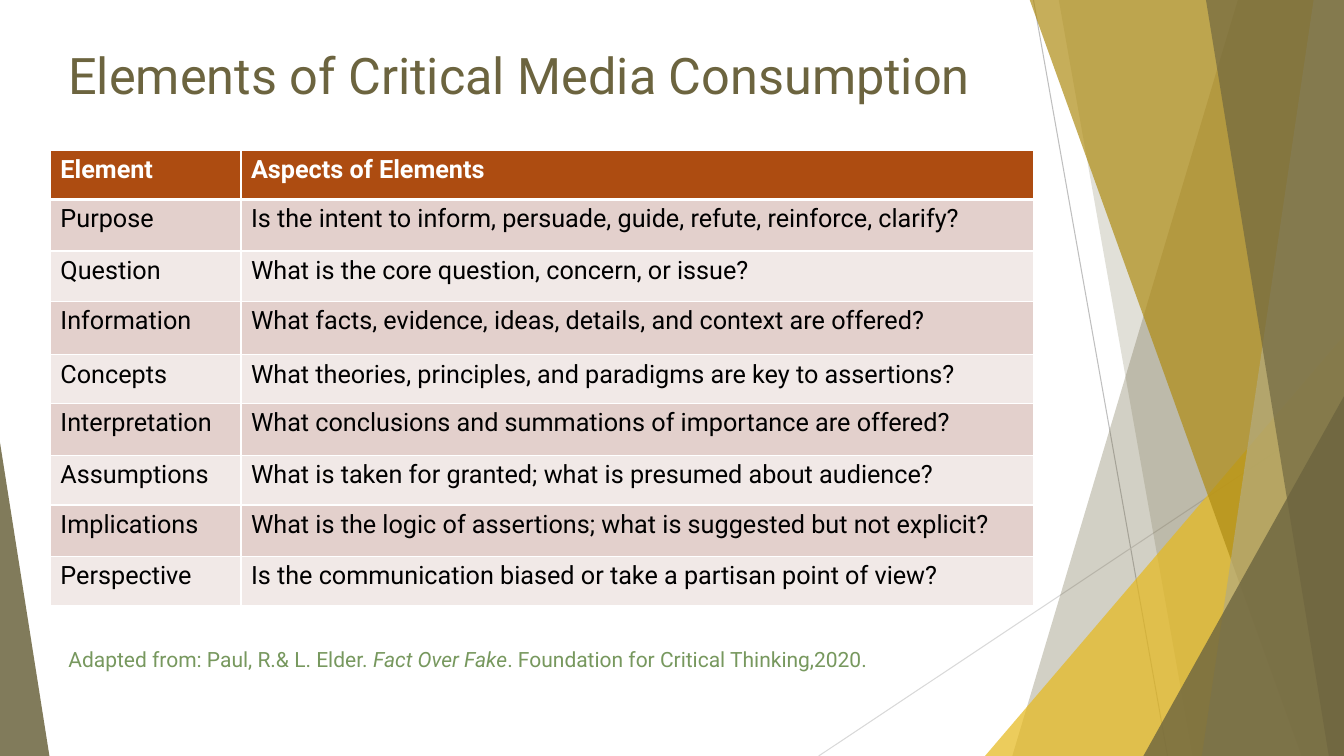
from dataclasses import dataclass

from pptx import Presentation
from pptx.dml.color import RGBColor
from pptx.enum.shapes import MSO_CONNECTOR, MSO_SHAPE
from pptx.enum.text import MSO_ANCHOR
from pptx.oxml.ns import qn
from pptx.util import Inches, Pt
from lxml.etree import SubElement

WIDTH, HEIGHT = 13.33, 7.5
RIBBON_TOP = -0.01


@dataclass(frozen=True)
class Theme:
    font: str = "Roboto"
    olive: str = "6C643F"
    gold: str = "E6B91E"
    dark_gold: str = "AF8C14"
    sand: str = "B4AB7F"
    green: str = "77985E"
    header: str = "AD4C11"
    bands: tuple[str, str] = ("E3D0CC", "F1E9E7")
    white: str = "FFFFFF"
    black: str = "000000"
    title_size: int = 36
    table_size: int = 18
    source_size: int = 15


THEME = Theme()


@dataclass(frozen=True)
class Ray:
    start: tuple[float, float]
    end: tuple[float, float]
    color: str


@dataclass(frozen=True)
class Ribbon:
    """Band from a slanted left edge to the right side of the slide."""
    top_x: float
    bottom_x: float
    color: str
    opacity: int


@dataclass(frozen=True)
class Wedge:
    """Right triangle standing on the bottom edge, with its apex at 0 or 1."""
    left: float
    top: float
    width: float
    apex: int
    color: str
    opacity: int


@dataclass(frozen=True)
class TextRun:
    text: str
    italic: bool = False


RAYS = [
    Ray((10.25, 0), (11.58, HEIGHT), "BFBFBF"),
    Ray((WIDTH, 4.03), (8.12, HEIGHT), "D9D9D9"),
]
FACETS = [
    Ribbon(12.28, 10.04, THEME.olive, 30),
    Ribbon(10.5, 11.83, THEME.olive, 20),
    Wedge(9.77, 3.33, 3.56, 1, THEME.gold, 72),
    Ribbon(10.21, 12.91, THEME.dark_gold, 70),
    Ribbon(13.03, 11.92, THEME.sand, 70),
    Ribbon(11.96, 13.18, THEME.olive, 65),
    Wedge(11.34, 3.93, 1.99, 1, THEME.olive, 80),
    Wedge(0, 4.39, 0.49, 0, THEME.olive, 85),
]
COLUMN_WIDTHS = [1.89, 7.86]
ROW_HEIGHTS = [0.49, 0.51, 0.5, 0.53, 0.48, 0.52, 0.49, 0.51, 0.49]
ROWS = [
    ("Element", "Aspects of Elements"),
    ("Purpose", "Is the intent to inform, persuade, guide, refute, reinforce, clarify?"),
    ("Question", "What is the core question, concern, or issue?"),
    ("Information", "What facts, evidence, ideas, details, and context are offered?"),
    ("Concepts", "What theories, principles, and paradigms are key to assertions?"),
    ("Interpretation", "What conclusions and summations of importance are offered?"),
    ("Assumptions", "What is taken for granted; what is presumed about audience?"),
    ("Implications", "What is the logic of assertions; what is suggested but not explicit?"),
    ("Perspective", "Is the communication biased or take a partisan point of view?"),
]
SOURCE = [
    TextRun("Adapted from: Paul, R.& L. Elder. "),
    TextRun("Fact Over Fake", italic=True),
    TextRun(". Foundation for Critical Thinking,2020."),
]


def rgb(color: str) -> RGBColor:
    return RGBColor.from_string(color)


def style_paragraph(paragraph, size: int, color: str, bold: bool = False) -> None:
    font = paragraph.font
    font.name, font.size, font.bold = THEME.font, Pt(size), bold
    font.color.rgb = rgb(color)


def draw_ray(slide, ray: Ray) -> None:
    points = [Inches(value) for value in (*ray.start, *ray.end)]
    connector = slide.shapes.add_connector(MSO_CONNECTOR.STRAIGHT, *points)
    connector.line.color.rgb = rgb(ray.color)
    connector.line.width = Pt(0.75)
    SubElement(connector.element.spPr, qn("a:effectLst"))


def draw_facet(slide, facet: Ribbon | Wedge) -> None:
    if isinstance(facet, Ribbon):
        top, bottom, right = Inches(RIBBON_TOP), Inches(HEIGHT), Inches(WIDTH)
        builder = slide.shapes.build_freeform(Inches(facet.top_x), top)
        builder.add_line_segments([(right, top), (right, bottom), (Inches(facet.bottom_x), bottom)])
        shape = builder.convert_to_shape()
    else:
        shape = slide.shapes.add_shape(
            MSO_SHAPE.ISOSCELES_TRIANGLE, Inches(facet.left), Inches(facet.top),
            Inches(facet.width), Inches(HEIGHT - facet.top))
        shape.adjustments[0] = facet.apex
    shape.shadow.inherit = False
    shape.line.fill.background()
    shape.fill.solid()
    shape.fill.fore_color.rgb = rgb(facet.color)
    color_element = shape.element.spPr.find(qn("a:solidFill"))[0]
    SubElement(color_element, qn("a:alpha"), val=str(facet.opacity * 1000))


def draw_text(slide, box: tuple[float, float, float, float], runs: list[TextRun],
              size: int, color: str, anchor: MSO_ANCHOR) -> None:
    shape = slide.shapes.add_textbox(*[Inches(value) for value in box])
    frame = shape.text_frame
    frame.word_wrap = True
    frame.vertical_anchor = anchor
    paragraph = frame.paragraphs[0]
    for text_run in runs:
        run = paragraph.add_run()
        run.text = text_run.text
        if text_run.italic:
            run.font.italic = True
    style_paragraph(paragraph, size, color)


def set_borders(cell, top: int, bottom: int) -> None:
    properties = cell._tc.get_or_add_tcPr()
    for side, width in (("L", 1), ("R", 1), ("T", top), ("B", bottom)):
        line = SubElement(properties, qn(f"a:ln{side}"), w=str(Pt(width)))
        fill = SubElement(line, qn("a:solidFill"))
        SubElement(fill, qn("a:srgbClr"), val=THEME.white)


def draw_table(slide) -> None:
    frame = slide.shapes.add_table(
        len(ROWS), len(COLUMN_WIDTHS), Inches(0.5), Inches(1.49),
        Inches(sum(COLUMN_WIDTHS)), Inches(sum(ROW_HEIGHTS)))
    table = frame.table
    for column, width in zip(table.columns, COLUMN_WIDTHS):
        column.width = Inches(width)
    for index, (row, height, texts) in enumerate(zip(table.rows, ROW_HEIGHTS, ROWS)):
        row.height = Inches(height)
        is_header = index == 0
        for cell, text in zip(row.cells, texts):
            cell.text = text
            style_paragraph(cell.text_frame.paragraphs[0], THEME.table_size,
                            THEME.white if is_header else THEME.black, is_header)
            set_borders(cell, top=3 if index == 1 else 1, bottom=3 if is_header else 1)
            cell.fill.solid()
            cell.fill.fore_color.rgb = rgb(THEME.header if is_header else THEME.bands[(index - 1) % 2])


def main() -> None:
    presentation = Presentation()
    presentation.slide_width, presentation.slide_height = Inches(WIDTH), Inches(HEIGHT)
    slide = presentation.slides.add_slide(presentation.slide_layouts[6])

    # Background decoration
    for ray in RAYS:
        draw_ray(slide, ray)
    for facet in FACETS:
        draw_facet(slide, facet)

    # Title, table and source line
    draw_text(slide, (0.58, 0.33, 9.4, 0.81), [TextRun("Elements of Critical Media Consumption")],
              THEME.title_size, THEME.olive, MSO_ANCHOR.MIDDLE)
    draw_table(slide)
    draw_text(slide, (0.58, 6.36, 9.49, 0.35), SOURCE,
              THEME.source_size, THEME.green, MSO_ANCHOR.TOP)

    presentation.save("out.pptx")


if __name__ == "__main__":
    main()
